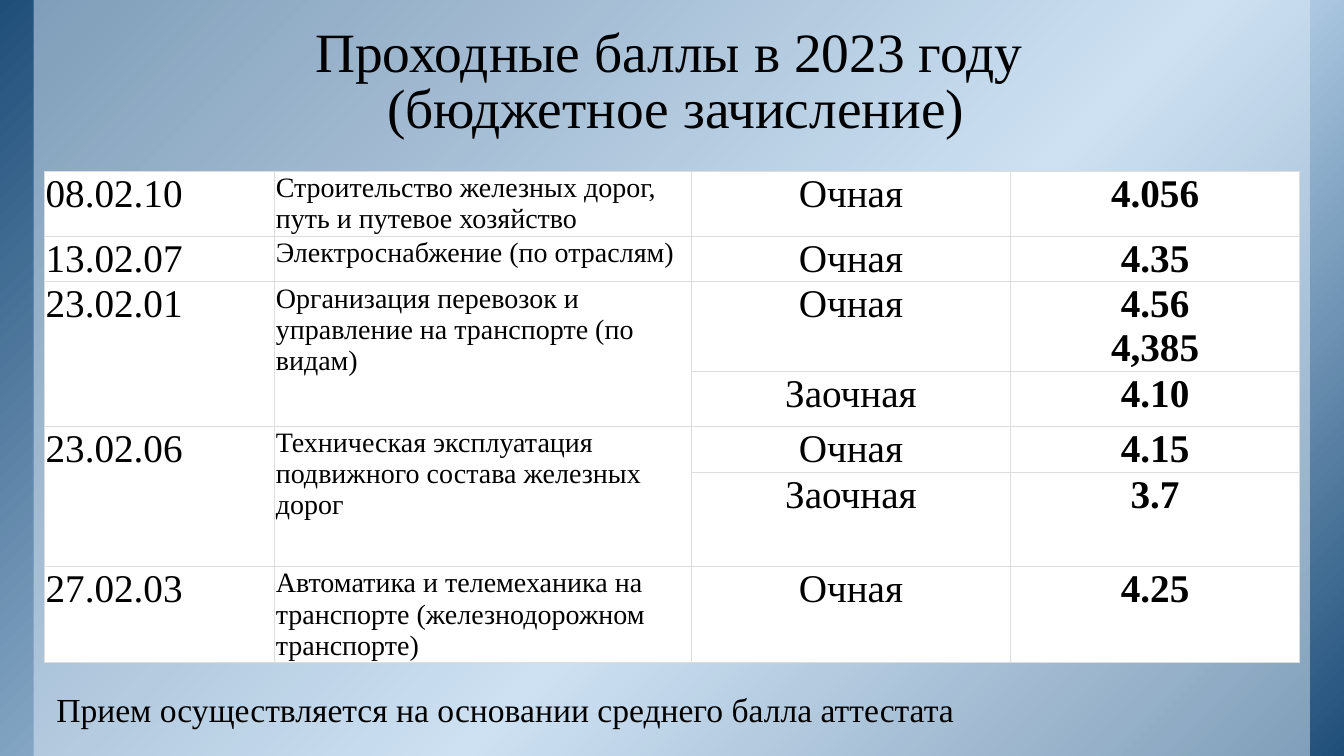
from copy import deepcopy
from dataclasses import dataclass

from lxml import etree
from pptx import Presentation
from pptx.dml import color
from pptx.enum import shapes, text
from pptx.oxml import ns, parse_xml
from pptx.util import Cm, Pt


@dataclass(frozen=True)
class Theme:
    font: str = "Times New Roman"
    ink: str = "000000"
    paper: str = "FFFFFF"
    grid: str = "DDDDDD"
    veil: str = "DEEBF7"
    gradient: tuple = ((0, "1F4E79"), (58, "BDD7EE"), (100, "1F4E79"))
    title_size: float = 39.6
    note_size: float = 24
    cell_size: float = 28
    name_size: float = 20


def rgb(value):
    return color.RGBColor.from_string(value)


def write(para, content, *, theme, size, bold=False, align=None, spacing=None):
    """Fill a paragraph; a vertical tab in the content is a line break."""
    para.text = content
    if align is not None:
        para.alignment = align
    if spacing is not None:
        para.line_spacing = spacing
    for span in para.runs:
        span.font.name = theme.font
        span.font.size = Pt(size)
        span.font.bold = bold
        span.font.color.rgb = rgb(theme.ink)
    for line_break in para._p.findall(ns.qn("a:br")):
        line_break.append(deepcopy(para.runs[0]._r.rPr))


class SlideBuilder:
    def __init__(self, deck, theme):
        self.theme = theme
        self.page = deck.slides.add_slide(deck.slide_layouts[5])

    def backdrop(self, left, width, height, layer):
        """Add a full-height rectangle behind the placeholders."""
        box = self.page.shapes.add_shape(
            shapes.MSO_SHAPE.RECTANGLE, Cm(left), 0, Cm(width), Cm(height))
        box.shadow.inherit = False
        box.line.fill.background()
        box.fill.solid()
        box.fill.fore_color.rgb = rgb(self.theme.veil)
        self.page.shapes._spTree.insert(2 + layer, box._element)
        return box

    def shade(self, box, angle):
        stops = "".join(
            f'<a:gs pos="{place * 1000}"><a:srgbClr val="{value}"/></a:gs>'
            for place, value in self.theme.gradient)
        gradient = parse_xml(
            f'<a:gradFill {ns.nsdecls("a")} rotWithShape="1"><a:gsLst>{stops}</a:gsLst>'
            f'<a:lin ang="{angle * 60000}" scaled="0"/></a:gradFill>')
        properties = box._element.spPr
        properties.replace(properties.find(ns.qn("a:solidFill")), gradient)

    def fade(self, box, percent):
        tint = box._element.spPr.find(ns.qn("a:solidFill"))[0]
        etree.SubElement(tint, ns.qn("a:alpha"), val=str(percent * 1000))

    def title(self, content, left, top, width, height):
        box = self.page.shapes.title
        box.left, box.top, box.width, box.height = map(Cm, (left, top, width, height))
        frame = box.text_frame
        frame.auto_size = text.MSO_AUTO_SIZE.NONE
        frame.word_wrap = True
        frame.vertical_anchor = text.MSO_ANCHOR.BOTTOM
        frame.margin_left = frame.margin_right = Cm(0.33)
        frame.margin_top = frame.margin_bottom = Cm(0.18)
        write(frame.paragraphs[0], content, theme=self.theme, size=self.theme.title_size,
              align=text.PP_ALIGN.CENTER, spacing=0.85)

    def note(self, content, left, top, width, height):
        box = self.page.shapes.add_textbox(*map(Cm, (left, top, width, height)))
        frame = box.text_frame
        frame.word_wrap = True
        frame.auto_size = text.MSO_AUTO_SIZE.SHAPE_TO_FIT_TEXT
        write(frame.paragraphs[0], content, theme=self.theme, size=self.theme.note_size,
              spacing=0.95)

    def style_cell(self, cell):
        cell.margin_left = cell.margin_right = Cm(0.03)
        cell.margin_top = cell.margin_bottom = Cm(0.03)
        properties = cell._tc.get_or_add_tcPr()
        for side in ("lnL", "lnR", "lnT", "lnB"):
            properties.append(parse_xml(
                f'<a:{side} {ns.nsdecls("a")} w="{Pt(0.75)}"><a:solidFill>'
                f'<a:srgbClr val="{self.theme.grid}"/></a:solidFill></a:{side}>'))
        cell.fill.solid()
        cell.fill.fore_color.rgb = rgb(self.theme.paper)

    def fill_cell(self, cell, lines, **style):
        for index, line in enumerate(lines):
            frame = cell.text_frame
            para = frame.add_paragraph() if index else frame.paragraphs[0]
            write(para, line, theme=self.theme, **style)

    def score_table(self, programmes, left, top, widths, heights):
        grid = self.page.shapes.add_table(
            len(heights), len(widths), Cm(left), Cm(top),
            Cm(sum(widths)), Cm(sum(heights))).table
        grid.first_row = grid.horz_banding = False
        for column, width in zip(grid.columns, widths):
            column.width = Cm(width)
        for row, height in zip(grid.rows, heights):
            row.height = Cm(height)
        for cell in grid.iter_cells():
            self.style_cell(cell)

        # Code and name span all study forms of a programme
        big, small = self.theme.cell_size, self.theme.name_size
        centre = text.PP_ALIGN.CENTER
        row = 0
        for code, name, forms in programmes:
            for column, label, size in ((0, code, big), (1, name, small)):
                cell = grid.cell(row, column)
                if len(forms) > 1:
                    cell.merge(grid.cell(row + len(forms) - 1, column))
                self.fill_cell(cell, [label], size=size)
            for form, *scores in forms:
                self.fill_cell(grid.cell(row, 2), [form], size=big, align=centre)
                self.fill_cell(grid.cell(row, 3), scores, size=big, bold=True, align=centre)
                row += 1


PROGRAMMES = [
    ("08.02.10", "Строительство железных дорог, путь и путевое хозяйство",
     [("Очная", "4.056")]),
    ("13.02.07", "Электроснабжение (по отраслям)", [("Очная", "4.35")]),
    ("23.02.01", "Организация перевозок и управление на транспорте (по видам)",
     [("Очная", "4.56", "4,385"), ("Заочная", "4.10")]),
    ("23.02.06", "Техническая эксплуатация подвижного состава железных дорог",
     [("Очная", "4.15"), ("Заочная", "3.7")]),
    ("27.02.03", "Автоматика и телемеханика на транспорте (железнодорожном транспорте)",
     [("Очная", "4.25")]),
]


def main():
    deck = Presentation()
    width, height = 33.87, 19.05
    deck.slide_width, deck.slide_height = Cm(width), Cm(height)
    slide = SlideBuilder(deck, Theme())

    # Background: gradient with a translucent panel
    slide.shade(slide.backdrop(0, width, height, layer=0), angle=45)
    slide.fade(slide.backdrop(0.85, 32.16, height, layer=1), percent=50)

    # Heading, table and footnote
    slide.title("Проходные баллы в 2023 году \v(бюджетное зачисление)",
                2.92, 1.32, 28.22, 2.39)
    slide.score_table(PROGRAMMES, 1.12, 4.32, widths=(5.8, 10.5, 8.05, 7.28),
                      heights=(1.62, 1.13, 2.22, 1.4, 1.13, 2.38, 2.38))
    slide.note("Прием осуществляется на основании среднего балла аттестата",
               1.17, 17.32, 31.8, 1.22)

    deck.save("out.pptx")


if __name__ == "__main__":
    main()
